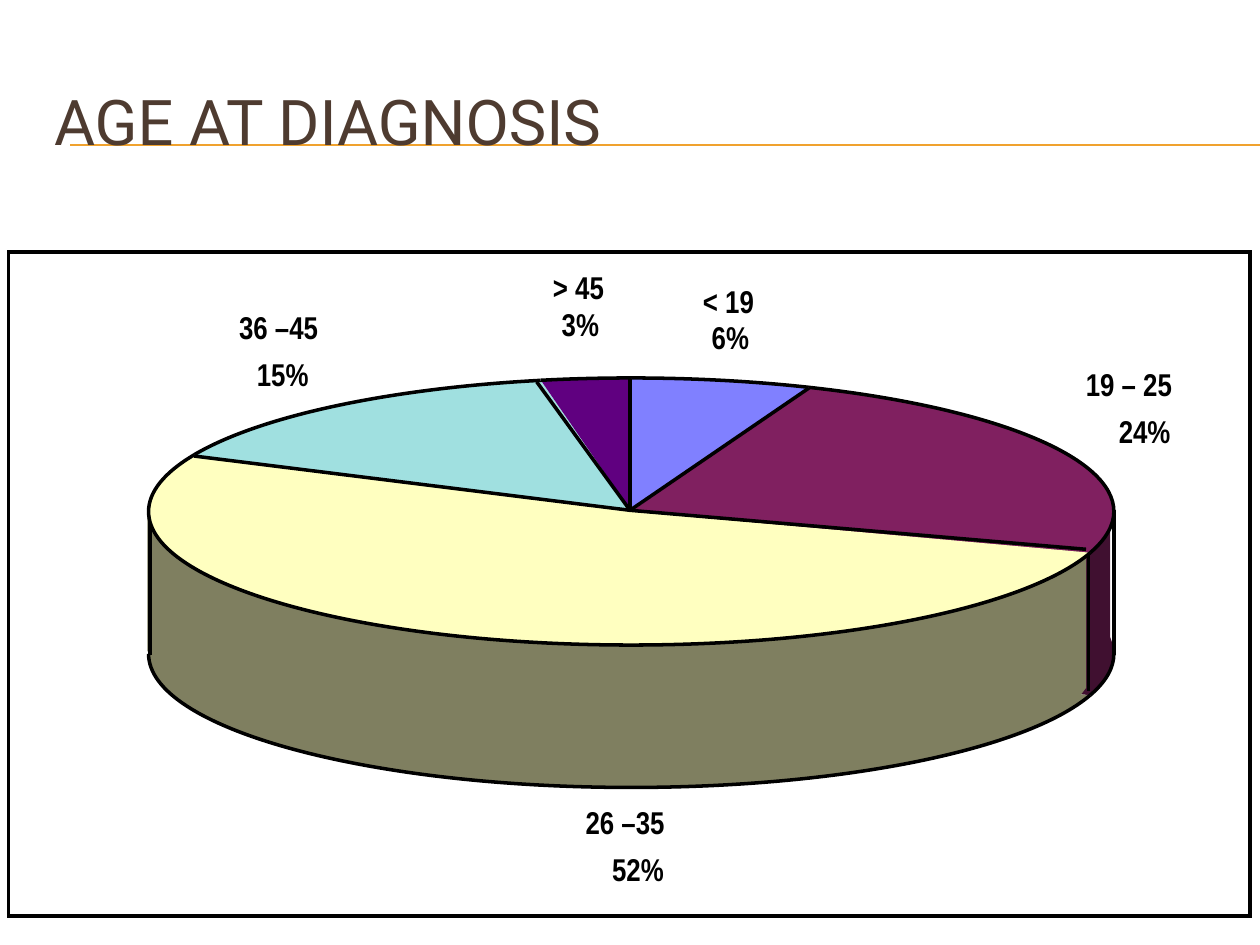
from copy import deepcopy
from math import cos, radians, sin, tan

from lxml.etree import SubElement
from pptx import Presentation
from pptx.dml.color import RGBColor
from pptx.enum.shapes import MSO_CONNECTOR, MSO_SHAPE
from pptx.enum.text import MSO_ANCHOR
from pptx.oxml.ns import qn
from pptx.util import Pt

CENTER = (360.7, 292.3)
RADIUS_X, RADIUS_Y = 275.8, 76.3
DEPTH = 81.4
HUB = (360, 291.6)
PLUM_SIDE, OLIVE_SIDE = "401030", "7F7F60"

# label, percent, colour, label left, top and width, percent left and top, edge tip
SLICES = [
    ("< 19", 6, "8080FF", (394.6, 157.7, 53.3), (399.6, 178.3), (462.2, 221.8)),
    ("19 – 25", 24, "802060", (613.4, 205.2, 79.9), (632.2, 231.8), (620.6, 313.9)),
    ("26 –35", 52, "FFFFC0", (327.6, 455.5, 74.9), (342.7, 482.4), (110.9, 260.6)),
    ("36 –45", 15, "A0E0E0", (129.6, 172.5, 74.9), (139.7, 199.4), (306.7, 218.2)),
    ("> 45", 3, "600080", (308.9, 149.8, 53.3), (313.9, 170.6), (360, 216.7)),
]


def color(value):
    return RGBColor.from_string(value)


def rim(start, end, drop):
    """Start, control and end points of curves along the rim, clockwise from the top."""
    cuts = [start] + [a for a in (90, 180, 270) if start < a < end] + [end]

    def place(x, y):
        return CENTER[0] + RADIUS_X * x, CENTER[1] + RADIUS_Y * y + drop

    points = [place(sin(radians(start)), -cos(radians(start)))]
    for a, b in zip(map(radians, cuts), map(radians, cuts[1:])):
        k = 4 / 3 * tan((b - a) / 4)
        points += [place(sin(a) + k * cos(a), -cos(a) + k * sin(a)),
                   place(sin(b) - k * cos(b), -cos(b) - k * sin(b)),
                   place(sin(b), -cos(b))]
    return points


def lines_to_curves(path, count):
    """Join the first count line segments, three at a time, into Bézier curves."""
    segments = path.findall(qn("a:lnTo"))[:count]
    for i in range(0, count, 3):
        curve = SubElement(path, qn("a:cubicBezTo"))
        segments[i].addprevious(curve)
        for segment in segments[i:i + 3]:
            curve.append(segment[0])
            path.remove(segment)


class SlideBuilder:
    line_color = "000000"
    line_width = 2
    rule_color = "F0A22E"
    title_color = "4E3B30"
    title_font = "Roboto"
    label_font = "Arial Narrow"

    def __init__(self, slide):
        self.shapes = slide.shapes

    def paint(self, sp, fill=None, outlined=False):
        sp.shadow.inherit = False
        if fill:
            sp.fill.solid()
            sp.fill.fore_color.rgb = color(fill)
        else:
            sp.fill.background()
        if outlined:
            sp.line.color.rgb = color(self.line_color)
            sp.line.width = Pt(self.line_width)
            SubElement(sp.line._ln, qn("a:miter"), lim="800000")
        else:
            sp.line.fill.background()

    def polygon(self, points, fill=None, outlined=False):
        points = [(round(x * 100), round(y * 100)) for x, y in points]
        builder = self.shapes.build_freeform(*points[0], scale=Pt(1) / 100)
        builder.add_line_segments(points[1:], close=True)
        sp = builder.convert_to_shape()
        self.paint(sp, fill, outlined)
        return sp

    def sector(self, start, end, drop=0, fill=None, outlined=True):
        """Pie sector whose line, if any, follows only the rim."""
        points = rim(start, end, drop)
        hub = (CENTER[0], CENTER[1] + drop)
        sp = self.polygon(points + [hub], fill, outlined)
        area = next(sp._element.iter(qn("a:path")))
        lines_to_curves(area, len(points) - 1)
        if outlined:
            edge = deepcopy(area)
            for tag in ("a:lnTo", "a:close"):
                edge.remove(edge.find(qn(tag)))
            edge.set("fill", "none")
            area.set("stroke", "0")
            area.addprevious(edge)

    def frame(self, x, y, w, h):
        sp = self.shapes.add_shape(MSO_SHAPE.RECTANGLE, Pt(x), Pt(y), Pt(w), Pt(h))
        self.paint(sp, outlined=True)

    def line(self, start, end, hex_color=line_color, width=line_width):
        line = self.shapes.add_connector(
            MSO_CONNECTOR.STRAIGHT, *(Pt(v) for v in (*start, *end)))
        line.line.color.rgb = color(hex_color)
        line.line.width = Pt(width)
        SubElement(line._element.spPr, qn("a:effectLst"))

    def text(self, text, x, y, w, h, font, size, hex_color, bold=False):
        tf = self.shapes.add_textbox(Pt(x), Pt(y), Pt(w), Pt(h)).text_frame
        tf.word_wrap = True
        tf.text = text
        r = tf.paragraphs[0].runs[0]
        r.font.name = font
        r.font.size = Pt(size)
        r.font.bold = bold
        r.font.color.rgb = color(hex_color)
        return tf

    def title(self, text):
        tf = self.text(text, 23.8, 35.5, 684, 66.2, self.title_font, 36, self.title_color)
        tf.vertical_anchor = MSO_ANCHOR.MIDDLE

    def label(self, text, x, y, w):
        self.text(text, x, y, w, 36, self.label_font, 18, self.line_color, bold=True)

    def upright(self, x, top, bottom):
        self.line((x, top), (x, bottom))

    def sides(self):
        self.sector(21.6, 108, DEPTH, PLUM_SIDE, outlined=False)
        self.polygon([HUB, (634.3, 291.6), (634.3, 372.2), (360, 374.4)], PLUM_SIDE)
        self.upright(636.5, 291.6, 374.4)
        self.polygon([HUB, (620.6, 312.5), (620.6, 393.1), (360, 375.8)], PLUM_SIDE)
        self.sector(90, 108, DEPTH)
        self.sector(108, 295.2, DEPTH, OLIVE_SIDE, outlined=False)
        self.polygon([HUB, (620.6, 312.5), (620.6, 393.1), (613.4, 402.5),
                      (358.6, 376.6), (358.6, 291.6)], OLIVE_SIDE)
        self.upright(622.1, 312.5, 394.6)
        self.polygon([(359.3, 291.6), (84.2, 291.6), (84.2, 372.2), (359.3, 374.4)],
                     OLIVE_SIDE)
        self.upright(85.7, 291.6, 374.4)
        self.sector(108, 270, DEPTH)

    def top(self):
        start = 0
        for _, percent, fill, *_ in SLICES:
            end = start + percent * 3.6
            self.sector(start, end, fill=fill)
            start = end
        for *_, tip in SLICES:
            self.line(HUB, tip)


def main():
    prs = Presentation()
    prs.slide_width, prs.slide_height = Pt(720), Pt(540)
    s = SlideBuilder(prs.slides.add_slide(prs.slide_layouts[6]))
    for y in (82.9, 83.2):
        s.line((40.3, y), (720, y), s.rule_color, 0.75)
    s.title("AGE AT DIAGNOSIS")
    s.sides()
    s.top()
    for name, percent, _, name_box, percent_at, _ in SLICES:
        s.label(name, *name_box)
        s.label(f"{percent}%", *percent_at, 54 if percent > 9 else 42.5)
    s.frame(5, 144, 709.2, 379.4)
    prs.save("out.pptx")


if __name__ == "__main__":
    main()
